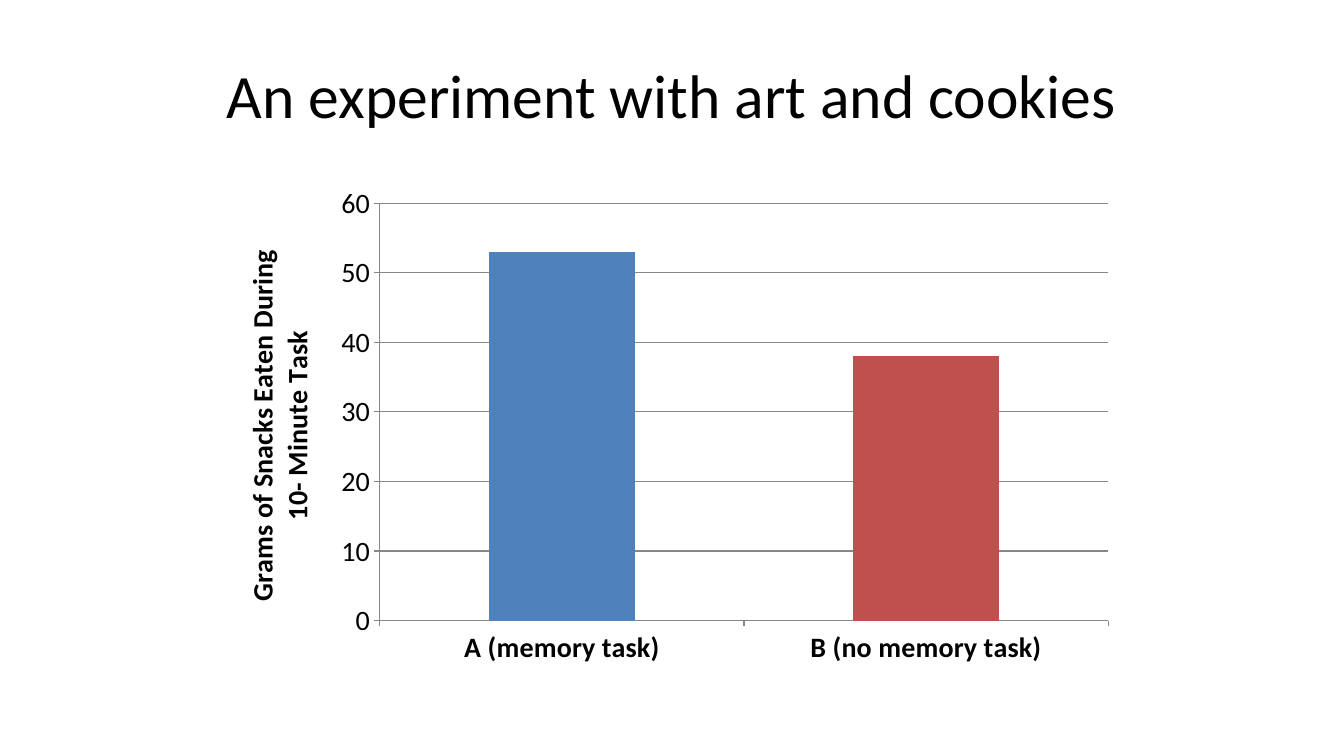
from pptx import Presentation
from pptx.chart.data import CategoryChartData
from pptx.dml.color import RGBColor
from pptx.enum.chart import XL_CHART_TYPE, XL_TICK_MARK
from pptx.enum.text import MSO_ANCHOR, PP_ALIGN
from pptx.util import Inches, Pt

COLUMNS = XL_CHART_TYPE.COLUMN_CLUSTERED
TICK_OUTSIDE = XL_TICK_MARK.OUTSIDE
TICK_NONE = XL_TICK_MARK.NONE
MIDDLE = MSO_ANCHOR.MIDDLE
CENTER = PP_ALIGN.CENTER

BLACK = RGBColor(0x00, 0x00, 0x00)
GRAY = RGBColor(0x87, 0x87, 0x87)
BLUE = RGBColor(0x4F, 0x81, 0xBD)
RED = RGBColor(0xC0, 0x50, 0x4D)

FONT = "Calibri"
SLIDE_WIDTH = Inches(13.33)
SLIDE_HEIGHT = Inches(7.5)
BLANK_LAYOUT = 6

TITLE_AREA = (0.05, 0.04, 0.9, 0.167)
CHART_AREA = (0.163, 0.233, 0.675, 0.66)
SNACKS = [
    ("A (memory task)", 53, BLUE),
    ("B (no memory task)", 38, RED),
]


def place(area):
    left, top, width, height = area
    return (
        int(SLIDE_WIDTH * left),
        int(SLIDE_HEIGHT * top),
        int(SLIDE_WIDTH * width),
        int(SLIDE_HEIGHT * height),
    )


def set_font(font, size, bold=False):
    font.name = FONT
    font.size = Pt(size)
    font.bold = bold
    font.color.rgb = BLACK


def set_line(line):
    line.color.rgb = GRAY
    line.width = Pt(0.75)


def style_axis(axis, bold=False):
    axis.major_tick_mark = TICK_OUTSIDE
    axis.minor_tick_mark = TICK_NONE
    set_font(axis.tick_labels.font, 20, bold)
    set_line(axis.format.line)


def add_title(slide, text):
    text_frame = slide.shapes.add_textbox(*place(TITLE_AREA)).text_frame
    text_frame.word_wrap = True
    text_frame.vertical_anchor = MIDDLE
    text_frame.text = text
    paragraph = text_frame.paragraphs[0]
    paragraph.alignment = CENTER
    set_font(paragraph.runs[0].font, 44)


def add_column_chart(slide, rows, axis_title):
    chart_data = CategoryChartData()
    chart_data.categories = [category for category, _, _ in rows]
    chart_data.add_series("Series 1", [value for _, value, _ in rows])
    chart = slide.shapes.add_chart(COLUMNS, *place(CHART_AREA), chart_data).chart
    chart.has_title = False
    chart.has_legend = False
    set_font(chart.font, 10)

    plot = chart.plots[0]
    plot.gap_width = 150
    plot.vary_by_categories = False
    for index, (_, _, color) in enumerate(rows):
        fill = plot.series[0].points[index].format.fill
        fill.solid()
        fill.fore_color.rgb = color

    style_axis(chart.category_axis, bold=True)
    value_axis = chart.value_axis
    style_axis(value_axis)
    value_axis.minimum_scale = 0
    value_axis.maximum_scale = 60
    value_axis.major_unit = 10
    value_axis.has_major_gridlines = True
    set_line(value_axis.major_gridlines.format.line)
    title_frame = value_axis.axis_title.text_frame
    title_frame.text = axis_title
    set_font(title_frame.paragraphs[0].runs[0].font, 20, bold=True)


def main():
    presentation = Presentation()
    presentation.slide_width = SLIDE_WIDTH
    presentation.slide_height = SLIDE_HEIGHT
    slide = presentation.slides.add_slide(presentation.slide_layouts[BLANK_LAYOUT])
    add_title(slide, "An experiment with art and cookies")
    add_column_chart(slide, SNACKS, "Grams of Snacks Eaten During 10- Minute Task")
    presentation.save("out.pptx")


if __name__ == "__main__":
    main()
